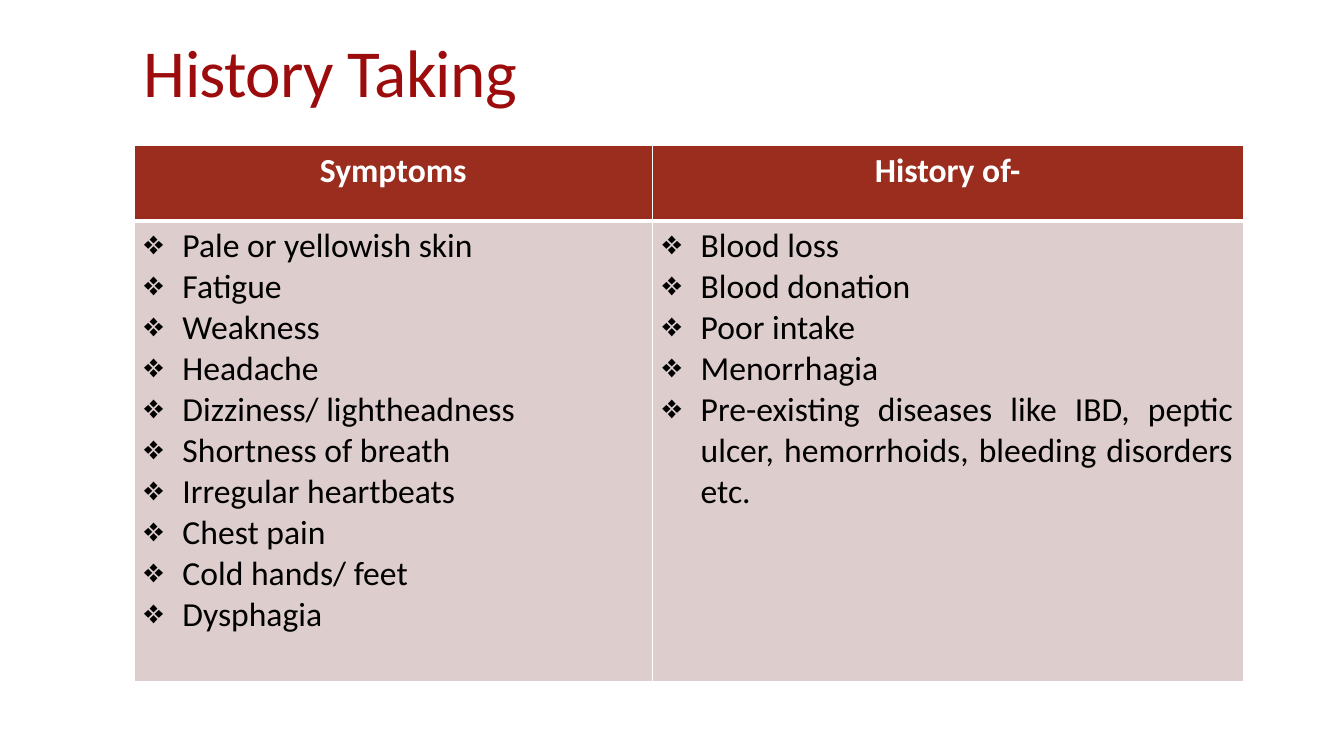
import pptx
import pptx.util
import pptx.dml.color
import pptx.enum.text
import pptx.oxml.ns
import lxml.etree

TITLE = "History Taking"
HISTORY = {
    "Symptoms": [
        "Pale or yellowish skin", "Fatigue", "Weakness", "Headache",
        "Dizziness/ lightheadness", "Shortness of breath",
        "Irregular heartbeats", "Chest pain", "Cold hands/ feet", "Dysphagia",
    ],
    "History of-": [
        "Blood loss", "Blood donation", "Poor intake", "Menorrhagia",
        "Pre-existing diseases like IBD, peptic ulcer, hemorrhoids, "
        "bleeding disorders etc.",
    ],
}
FONT = "Calibri"
WHITE = "FFFFFF"
LEFT, WIDTH = 1.33, 11
COLUMN_WIDTHS = [5.14, 5.86]
ROW_HEIGHTS = [0.75, 4.57]
INDENT = 0.38

inches = pptx.util.Inches
ALIGN = pptx.enum.text.PP_ALIGN


def color(value):
    return pptx.dml.color.RGBColor.from_string(value)


def child(parent, tag, **attributes):
    return lxml.etree.SubElement(parent, pptx.oxml.ns.qn(tag), attributes)


def style(paragraph, size, ink, bold=False):
    for run in paragraph.runs:
        run.font.name = FONT
        run.font.size = pptx.util.Pt(size)
        run.font.bold = bold
        run.font.color.rgb = color(ink)


def add_bullet(paragraph):
    properties = paragraph._p.get_or_add_pPr()
    properties.set("marL", str(inches(INDENT)))
    properties.set("indent", str(-inches(INDENT)))
    child(properties, "a:buChar", char="❖")


def fill_cell(cell, lines, fill, ink, bottom_border, is_header):
    properties = cell._tc.get_or_add_tcPr()
    borders = {"a:lnL": 1, "a:lnR": 1, "a:lnT": 1, "a:lnB": bottom_border}
    for side, points in borders.items():
        border = child(properties, side, w=str(pptx.util.Pt(points)))
        child(child(border, "a:solidFill"), "a:srgbClr", val=WHITE)
    cell.fill.solid()
    cell.fill.fore_color.rgb = color(fill)
    cell.text_frame.text = "\n".join(lines)
    for paragraph in cell.text_frame.paragraphs:
        paragraph.alignment = ALIGN.CENTER if is_header else ALIGN.JUSTIFY
        if not is_header:
            add_bullet(paragraph)
        style(paragraph, 24, ink, is_header)


def add_title(slide):
    box = slide.shapes.add_textbox(inches(LEFT), inches(0.17), inches(WIDTH), inches(0.98))
    frame = box.text_frame
    frame.word_wrap = True
    frame.vertical_anchor = pptx.enum.text.MSO_ANCHOR.BOTTOM
    frame.text = TITLE
    heading = frame.paragraphs[0]
    heading.line_spacing = 0.85
    style(heading, 48, "9D0C0C")
    heading.runs[0].font._element.set("spc", "-50")


def add_history(slide):
    table = slide.shapes.add_table(
        len(ROW_HEIGHTS), len(HISTORY), inches(LEFT), inches(1.44),
        inches(WIDTH), inches(sum(ROW_HEIGHTS))).table
    for row, height in zip(table.rows, ROW_HEIGHTS):
        row.height = inches(height)
    for index, (heading, findings) in enumerate(HISTORY.items()):
        table.columns[index].width = inches(COLUMN_WIDTHS[index])
        fill_cell(table.cell(0, index), [heading], "9B2D1F", WHITE, 3, True)
        fill_cell(table.cell(1, index), findings, "DECDCD", "000000", 1, False)


def main():
    deck = pptx.Presentation()
    deck.slide_width, deck.slide_height = inches(13.33), inches(7.5)
    slide = deck.slides.add_slide(deck.slide_layouts[6])
    add_history(slide)
    add_title(slide)
    deck.save("out.pptx")


if __name__ == "__main__":
    main()
